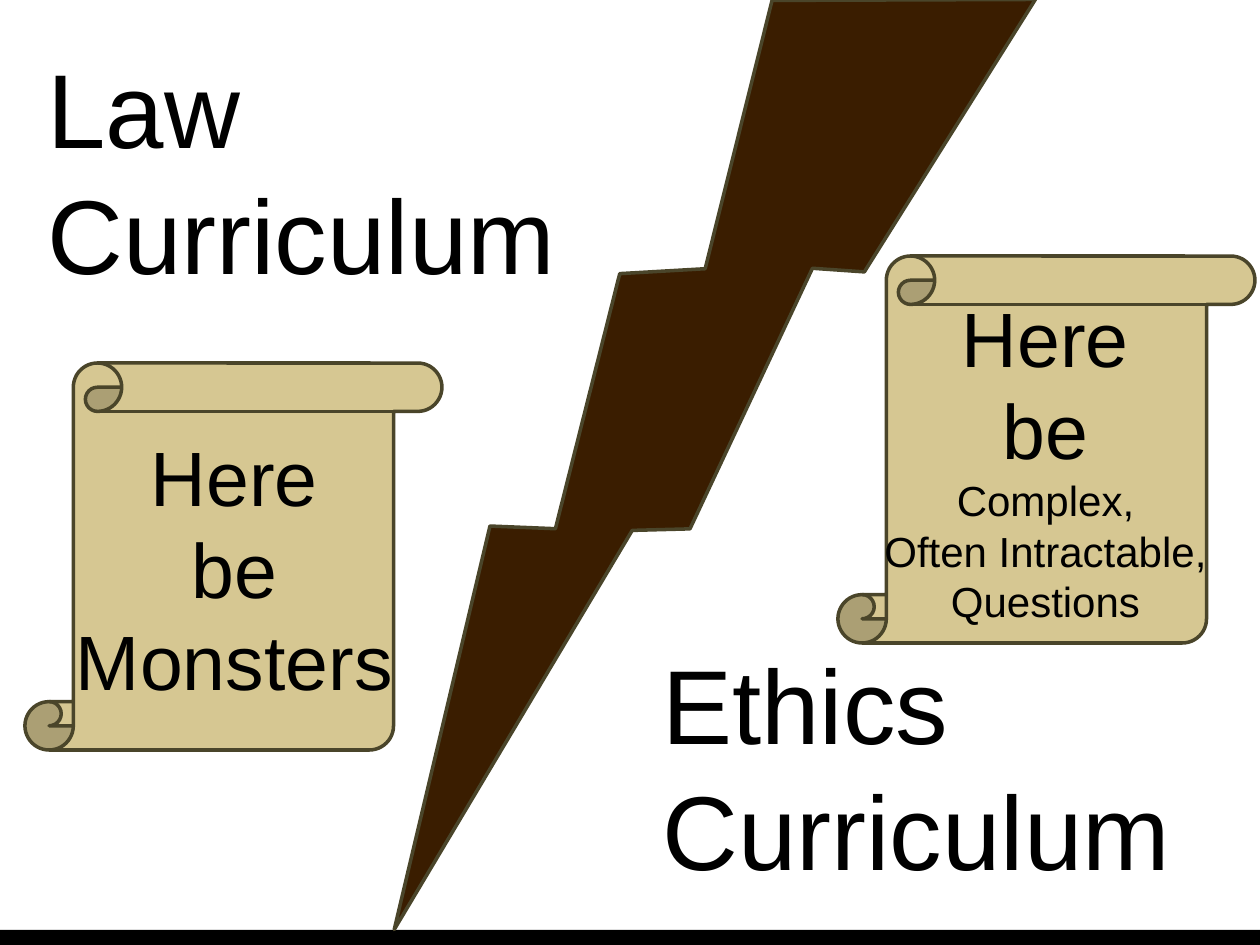
from pptx import Presentation
from pptx.dml.color import RGBColor
from pptx.enum.shapes import MSO_SHAPE
from pptx.enum.text import MSO_AUTO_SIZE, PP_ALIGN
from pptx.util import Emu, Pt

PX = 914400 / 126
COLORS = {"bar": "000000", "bolt": "3A1D00", "scroll": "D6C792",
          "outline": "4A452A", "text": "000000"}


def add_figure(page, kind, place, fill, line=None, rotation=0):
    figure = page.shapes.add_shape(kind, *[Emu(round(n * PX)) for n in place])
    figure.shadow.inherit = False
    figure.rotation = rotation
    figure.fill.solid()
    figure.fill.fore_color.rgb = RGBColor.from_string(COLORS[fill])
    if line:
        figure.line.color.rgb = RGBColor.from_string(COLORS[line])
        figure.line.width = Pt(2)
    else:
        figure.line.fill.background()


def add_text(page, place, lines, align=PP_ALIGN.LEFT):
    box = page.shapes.add_textbox(*[Emu(round(n * PX)) for n in place])
    frame = box.text_frame
    frame.word_wrap = True
    frame.auto_size = MSO_AUTO_SIZE.SHAPE_TO_FIT_TEXT
    for index, (text, size) in enumerate(lines):
        para = frame.paragraphs[0] if index == 0 else frame.add_paragraph()
        para.text = text
        para.alignment = align
        for span in para.runs:
            span.font.name = "Arial"
            span.font.size = Pt(size)
            span.font.color.rgb = RGBColor.from_string(COLORS["text"])


deck = Presentation()
deck.slide_width = Emu(round(1260 * PX))
deck.slide_height = Emu(round(945 * PX))
page = deck.slides.add_slide(deck.slide_layouts[6])

# Bottom bar and the bolt dividing the two curricula
add_figure(page, MSO_SHAPE.RECTANGLE, (0, 930, 1260, 15), "bar")
add_figure(page, MSO_SHAPE.LIGHTNING_BOLT, (435, -149, 444, 1097), "bolt",
           line="outline", rotation=48.4)

# Curriculum headings
add_text(page, (35, 37, 536, 267), [("Law", 60), ("Curriculum", 60)])
add_text(page, (650, 633, 546, 267), [("Ethics", 60), ("Curriculum", 60)])

# Scrolls
for left, top in [(838, 256), (25, 363)]:
    add_figure(page, MSO_SHAPE.VERTICAL_SCROLL, (left, top, 417, 387),
               "scroll", line="outline")

# Scroll captions
opening = [("Here", 44), ("be", 44)]
add_text(page, (47, 423, 375, 292), opening + [("Monsters", 44)],
         align=PP_ALIGN.CENTER)
add_text(page, (858, 284, 375, 352),
         opening + [("Complex,\vOften Intractable, Questions", 24)],
         align=PP_ALIGN.CENTER)

deck.save("out.pptx")
